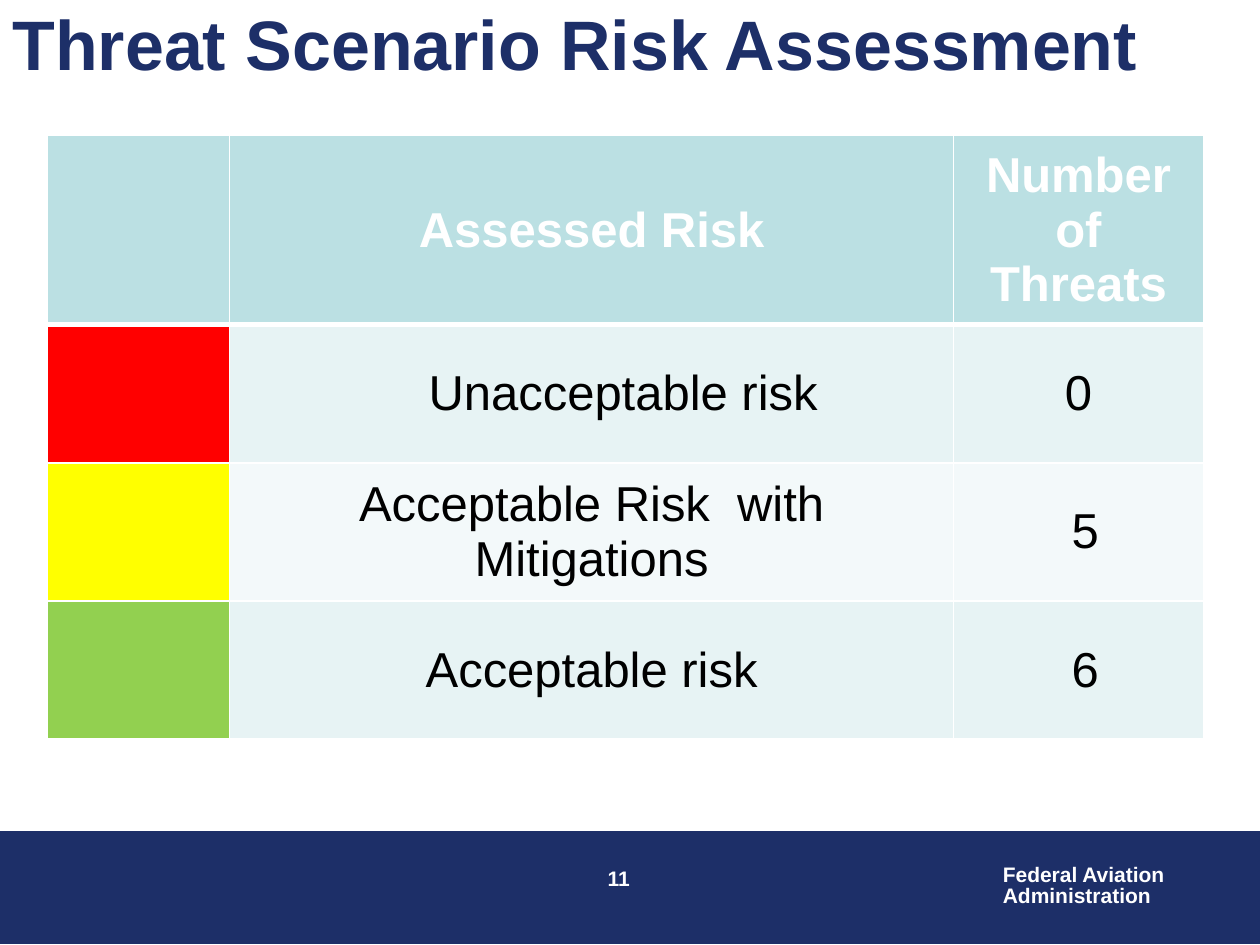
from pptx import Presentation
from pptx.dml.color import RGBColor
from pptx.enum.shapes import MSO_SHAPE
from pptx.enum.text import MSO_ANCHOR, MSO_AUTO_SIZE, PP_ALIGN
from pptx.oxml import parse_xml
from pptx.oxml.ns import nsdecls
from pptx.util import Pt

NAVY = RGBColor(0x1D, 0x2F, 0x68)
WHITE = RGBColor(0xFF, 0xFF, 0xFF)
BLACK = RGBColor(0x00, 0x00, 0x00)
TEAL = RGBColor(0xBB, 0xE0, 0xE3)
PALE = RGBColor(0xE7, 0xF3, 0xF4)
FAINT = RGBColor(0xF3, 0xF9, 0xFA)
RED = RGBColor(0xFF, 0x00, 0x00)
YELLOW = RGBColor(0xFF, 0xFF, 0x00)
GREEN = RGBColor(0x92, 0xD0, 0x50)

FORMS = {
    "title": dict(size=Pt(40), bold=True, color=NAVY),
    "foot": dict(size=Pt(12), bold=True, color=WHITE),
    "head": dict(size=Pt(28), bold=True, color=WHITE),
    "body": dict(size=Pt(28), bold=False, color=BLACK),
}
HEAD = ["", "Assessed Risk", "Number of Threats"]
RISKS = [
    (RED, PALE, "Unacceptable risk", "0", 36),
    (YELLOW, FAINT, "Acceptable Risk  with Mitigations", " 5", 0),
    (GREEN, PALE, "Acceptable risk", " 6", 0),
]


class Deck:
    def __init__(self, font):
        self.font = font
        self.prs = Presentation()
        self.prs.slide_width, self.prs.slide_height = Pt(720), Pt(540)
        self.slide = self.prs.slides.add_slide(self.prs.slide_layouts[5])

    def words(self, frame, text, form, align, space=1.0):
        frame.text = text
        for par in frame.paragraphs:
            par.alignment = align
            par.line_spacing = space
            par.font.name = self.font
            for key, value in FORMS[form].items():
                if key == "color":
                    par.font.color.rgb = value
                else:
                    setattr(par.font, key, value)

    def title(self, text, *box):
        shape = self.slide.shapes.title
        shape.left, shape.top, shape.width, shape.height = map(Pt, box)
        frame = shape.text_frame
        frame.auto_size = MSO_AUTO_SIZE.NONE
        frame.vertical_anchor = MSO_ANCHOR.MIDDLE
        self.words(frame, text, "title", PP_ALIGN.LEFT)

    def band(self, color, *box):
        shape = self.slide.shapes.add_shape(MSO_SHAPE.RECTANGLE, *map(Pt, box))
        shape.shadow.inherit = False
        shape.fill.solid()
        shape.fill.fore_color.rgb = color
        shape.line.color.rgb = color
        shape.line.width = Pt(0.75)

    def label(self, text, align, space, wrap, *box):
        frame = self.slide.shapes.add_textbox(*map(Pt, box)).text_frame
        frame.word_wrap = wrap
        self.words(frame, text, "foot", align, space)

    def cell(self, cell, text, fill, form, base, indent=0):
        props = cell._tc.get_or_add_tcPr()
        for side, width in dict(L=1, R=1, T=1, B=base).items():
            props.append(parse_xml(
                f'<a:ln{side} {nsdecls("a")} w="{Pt(width)}"><a:solidFill>'
                f'<a:srgbClr val="{WHITE}"/></a:solidFill></a:ln{side}>'))
        cell.fill.solid()
        cell.fill.fore_color.rgb = fill
        cell.vertical_anchor = MSO_ANCHOR.MIDDLE
        self.words(cell.text_frame, text, form, PP_ALIGN.CENTER)
        if indent:
            par = cell.text_frame.paragraphs[0]
            par.level = 1
            par._p.get_or_add_pPr().set("marL", str(Pt(indent)))

    def table(self, left, top, cols, rows):
        grid = self.slide.shapes.add_table(
            len(rows), len(cols), Pt(left), Pt(top),
            Pt(sum(cols)), Pt(sum(rows))).table
        for col, width in zip(grid.columns, cols):
            col.width = Pt(width)
        for row, height in zip(grid.rows, rows):
            row.height = Pt(height)
        for num, text in enumerate(HEAD):
            self.cell(grid.cell(0, num), text, TEAL, "head", 3)
        for num, (mark, tint, risk, count, indent) in enumerate(RISKS, 1):
            self.cell(grid.cell(num, 0), "", mark, "body", 1)
            self.cell(grid.cell(num, 1), risk, tint, "body", 1, indent)
            self.cell(grid.cell(num, 2), count, tint, "body", 1)


def main():
    deck = Deck("Arial")
    deck.band(NAVY, 0, 475.2, 720, 64)
    deck.label("11", PP_ALIGN.CENTER, 1.0, True, 278.6, 491, 150, 36)
    deck.label("Federal Aviation\nAdministration", PP_ALIGN.LEFT, 0.85,
               False, 566, 491, 108, 32)
    deck.title("Threat Scenario Risk Assessment", 0, 0, 667.5, 48.5)
    deck.table(26.8, 77.4, [104.5, 413.5, 143], [101, 79, 79, 79])
    deck.prs.save("out.pptx")


if __name__ == "__main__":
    main()
